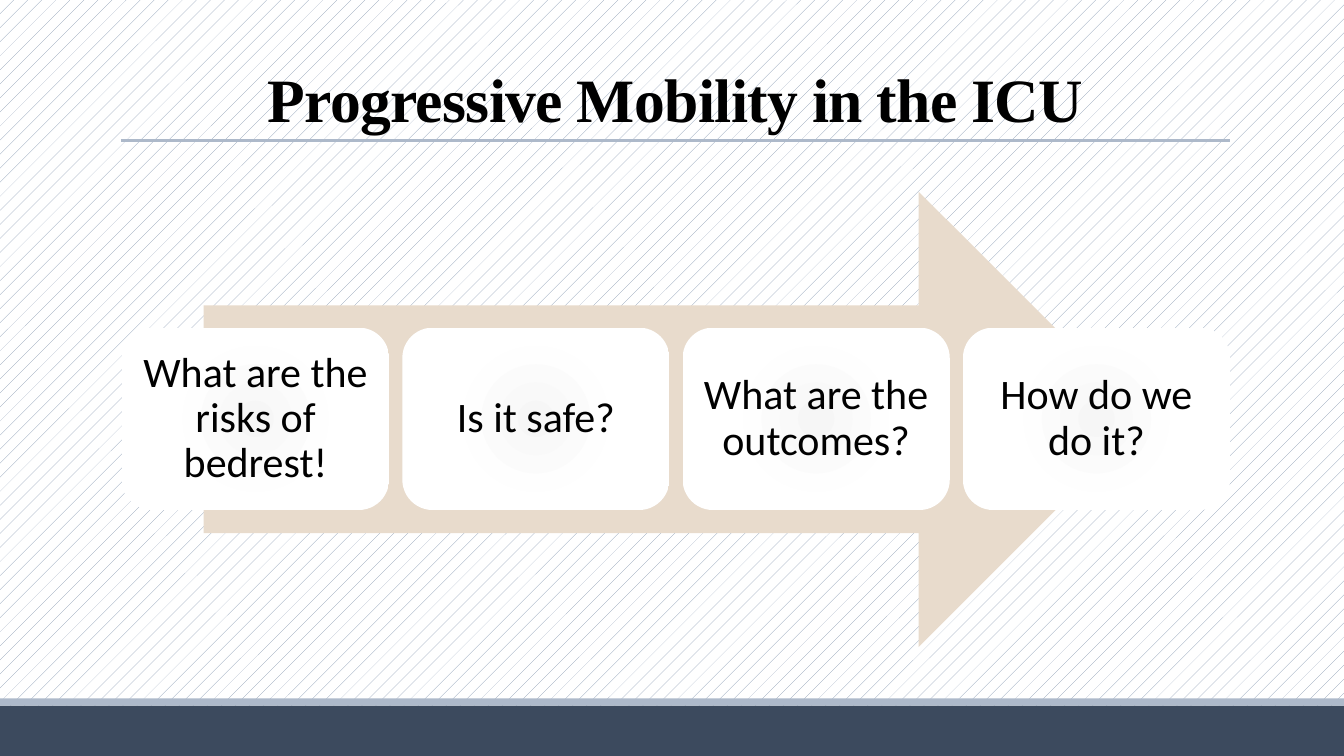
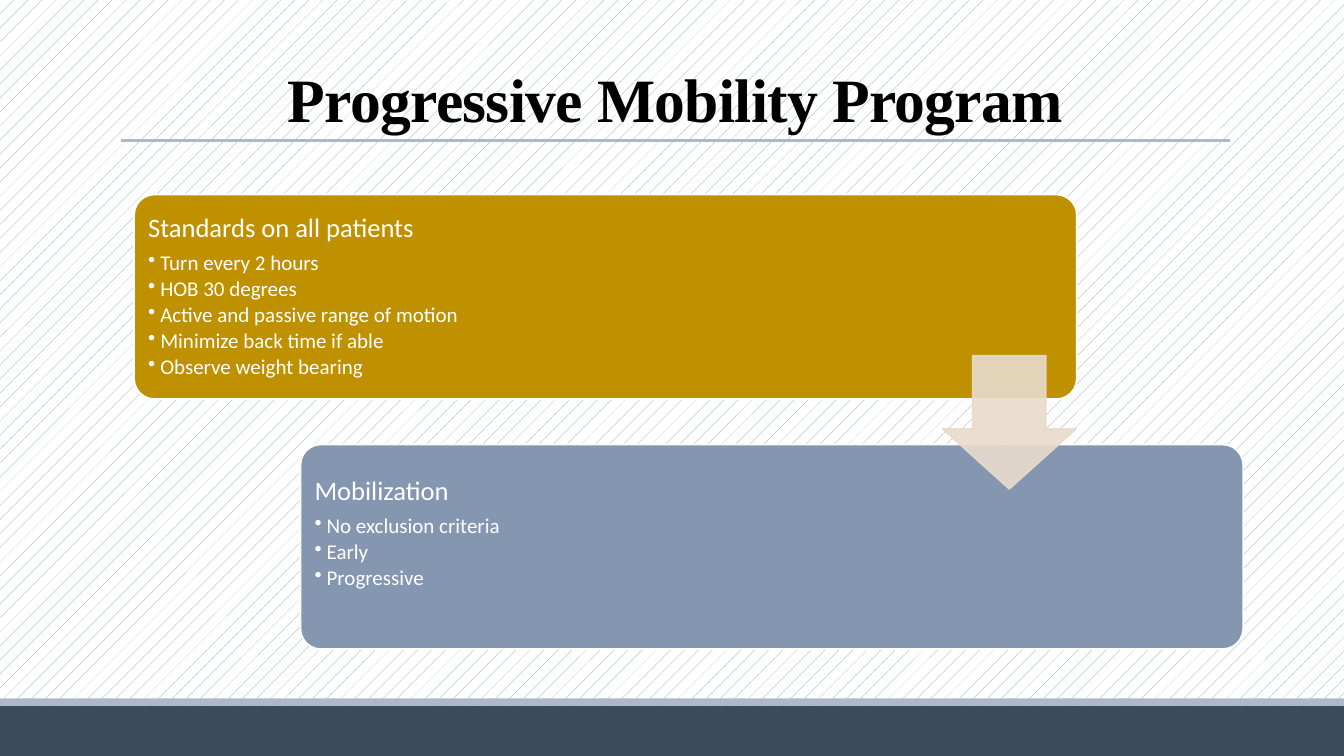
"""Build two slides on progressive mobility in intensive care."""
from lxml import etree
from pptx import Presentation
from pptx.dml.color import RGBColor
from pptx.enum.dml import MSO_PATTERN
from pptx.enum.shapes import MSO_CONNECTOR, MSO_SHAPE
from pptx.enum.text import MSO_ANCHOR, PP_ALIGN
from pptx.oxml.ns import qn
from pptx.util import Inches, Pt

RECTANGLE, ROUNDED = MSO_SHAPE.RECTANGLE, MSO_SHAPE.ROUNDED_RECTANGLE
RIGHT_ARROW, DOWN_ARROW = MSO_SHAPE.RIGHT_ARROW, MSO_SHAPE.DOWN_ARROW
STRAIGHT = MSO_CONNECTOR.STRAIGHT
MIDDLE, BOTTOM = MSO_ANCHOR.MIDDLE, MSO_ANCHOR.BOTTOM
LEFT, CENTER = PP_ALIGN.LEFT, PP_ALIGN.CENTER
DOTTED = MSO_PATTERN.PERCENT_5

BLACK = RGBColor(0x00, 0x00, 0x00)
WHITE = RGBColor(0xFF, 0xFF, 0xFF)
NAVY = RGBColor(0x3C, 0x4A, 0x5E)
PALE_BLUE = RGBColor(0xAD, 0xB9, 0xCA)
BLUE = RGBColor(0x84, 0x96, 0xB0)
GOLD = RGBColor(0xBF, 0x90, 0x00)
SAND = RGBColor(0xE8, 0xDB, 0xCC)
CARD_STOPS = [(0, "F6F6F6"), (45, "FEFEFE"), (100, "FFFFFF")]

TITLE_FONT, BODY_FONT = "Times New Roman", "Calibri"
SLIDE_WIDTH, SLIDE_HEIGHT = 13.33, 7.5
MARGIN, TITLE_BOTTOM = 1.2, 1.39
CONTENT_WIDTH = 11

QUESTIONS_TITLE = "Progressive Mobility in the ICU"
QUESTIONS = [
    "What are the risks of bedrest!",
    "Is it safe?",
    "What are the outcomes?",
    "How do we do it?",
]
PROGRAM_TITLE = "Progressive Mobility Program"
STAGES = [
    {"heading": "Standards on all patients", "color": GOLD, "bottom_inset": 0.08,
     "points": ["Turn every 2 hours", "HOB 30 degrees",
                "Active and passive range of motion",
                "Minimize back time if able", "Observe weight bearing"]},
    {"heading": "Mobilization", "color": BLUE, "bottom_inset": 0.34,
     "points": ["No exclusion criteria", "Early", "Progressive"]},
]


def add_block(slide, kind, box, color, line_color=None):
    shape = slide.shapes.add_shape(kind, *map(Inches, box))
    shape.shadow.inherit = False
    shape.fill.solid()
    shape.fill.fore_color.rgb = color
    if line_color is None:
        shape.line.fill.background()
    else:
        shape.line.color.rgb = line_color
        shape.line.width = Pt(1.25)
    return shape


def set_frame(shape, inset, bottom_inset):
    frame = shape.text_frame
    frame.word_wrap = True
    frame.vertical_anchor = MIDDLE
    frame.margin_left = frame.margin_top = frame.margin_right = Inches(inset)
    frame.margin_bottom = Inches(bottom_inset)
    return frame


def format_paragraph(paragraph, font_name, size, color, alignment, spacing=0.9):
    paragraph.alignment = alignment
    paragraph.line_spacing = spacing
    for run in paragraph.runs:
        run.font.name = font_name
        run.font.size = Pt(size)
        run.font.color.rgb = color


def add_bullet(paragraph):
    properties = paragraph._p.get_or_add_pPr()
    properties.set("marL", str(Inches(0.12)))
    properties.set("indent", str(Inches(-0.12)))
    etree.SubElement(properties, qn("a:buChar"), char="•")


def set_glow(shape):
    shape.fill.gradient()
    gradient = shape._element.spPr.find(qn("a:gradFill"))
    for child in list(gradient):
        gradient.remove(child)
    stops = etree.SubElement(gradient, qn("a:gsLst"))
    for position, color in CARD_STOPS:
        stop = etree.SubElement(stops, qn("a:gs"), pos=str(position * 1000))
        etree.SubElement(stop, qn("a:srgbClr"), val=color)
    circle = etree.SubElement(gradient, qn("a:path"), path="circle")
    etree.SubElement(circle, qn("a:fillToRect"), dict.fromkeys("ltrb", "100000"))


def set_opacity(shape, percent):
    for color in shape._element.spPr.iter(qn("a:srgbClr")):
        etree.SubElement(color, qn("a:alpha"), val=str(percent * 1000))


def add_title_slide(presentation, title):
    slide = presentation.slides.add_slide(presentation.slide_layouts[6])
    add_block(slide, RECTANGLE, (0, 7, SLIDE_WIDTH, 0.5), NAVY)
    add_block(slide, RECTANGLE, (0, 6.93, SLIDE_WIDTH, 0.07), PALE_BLUE)
    rule = slide.shapes.add_connector(
        STRAIGHT, Inches(MARGIN), Inches(TITLE_BOTTOM),
        Inches(MARGIN + CONTENT_WIDTH), Inches(TITLE_BOTTOM))
    rule.line.color.rgb = PALE_BLUE
    rule.line.width = Pt(2.25)
    etree.SubElement(rule._element.spPr, qn("a:effectLst"))
    box = slide.shapes.add_textbox(
        Inches(MARGIN), Inches(0.31), Inches(CONTENT_WIDTH), Inches(1.08))
    frame = box.text_frame
    frame.word_wrap = True
    frame.vertical_anchor = BOTTOM
    frame.text = title
    paragraph = frame.paragraphs[0]
    format_paragraph(paragraph, TITLE_FONT, 44, BLACK, CENTER, 0.85)
    font = paragraph.runs[0].font
    font.bold = True
    font._element.set("spc", "-50")
    return slide


def build_questions(presentation):
    slide = add_title_slide(presentation, QUESTIONS_TITLE)
    add_block(slide, RIGHT_ARROW, (2.02, 1.9, 9.35, 4.52), SAND)
    card_width, gap = 2.65, 0.13
    for index, question in enumerate(QUESTIONS):
        left = 1.21 + index * (card_width + gap)
        card = add_block(slide, ROUNDED, (left, 3.25, card_width, 1.81), WHITE)
        set_glow(card)
        frame = set_frame(card, 0.12, 0.12)
        frame.text = question
        format_paragraph(frame.paragraphs[0], BODY_FONT, 30, BLACK, CENTER)


def build_program(presentation):
    slide = add_title_slide(presentation, PROGRAM_TITLE)
    for index, stage in enumerate(STAGES):
        box = (1.33 + index * 1.65, 1.93 + index * 2.48, 9.35, 2.03)
        panel = add_block(slide, ROUNDED, box, stage["color"], WHITE)
        panel.adjustments[0] = 0.1
        frame = set_frame(panel, 0.08, stage["bottom_inset"])
        frame.text = stage["heading"]
        heading = frame.paragraphs[0]
        format_paragraph(heading, BODY_FONT, 19, WHITE, LEFT)
        heading.space_after = Pt(6.65)
        for point in stage["points"]:
            paragraph = frame.add_paragraph()
            paragraph.text = point
            paragraph.level = 1
            add_bullet(paragraph)
            format_paragraph(paragraph, BODY_FONT, 15, WHITE, LEFT)
            paragraph.space_after = Pt(2.25)
    arrow = add_block(slide, DOWN_ARROW, (9.35, 3.53, 1.32, 1.32), SAND, SAND)
    arrow.adjustments[0] = 0.55
    arrow.adjustments[1] = 0.45
    set_opacity(arrow, 90)


def main():
    presentation = Presentation()
    presentation.slide_width = Inches(SLIDE_WIDTH)
    presentation.slide_height = Inches(SLIDE_HEIGHT)
    backdrop = presentation.slide_master.background.fill
    backdrop.patterned()
    backdrop.pattern = DOTTED
    backdrop.fore_color.rgb = BLUE
    backdrop.back_color.rgb = WHITE
    build_questions(presentation)
    build_program(presentation)
    presentation.save("out.pptx")


if __name__ == "__main__":
    main()
